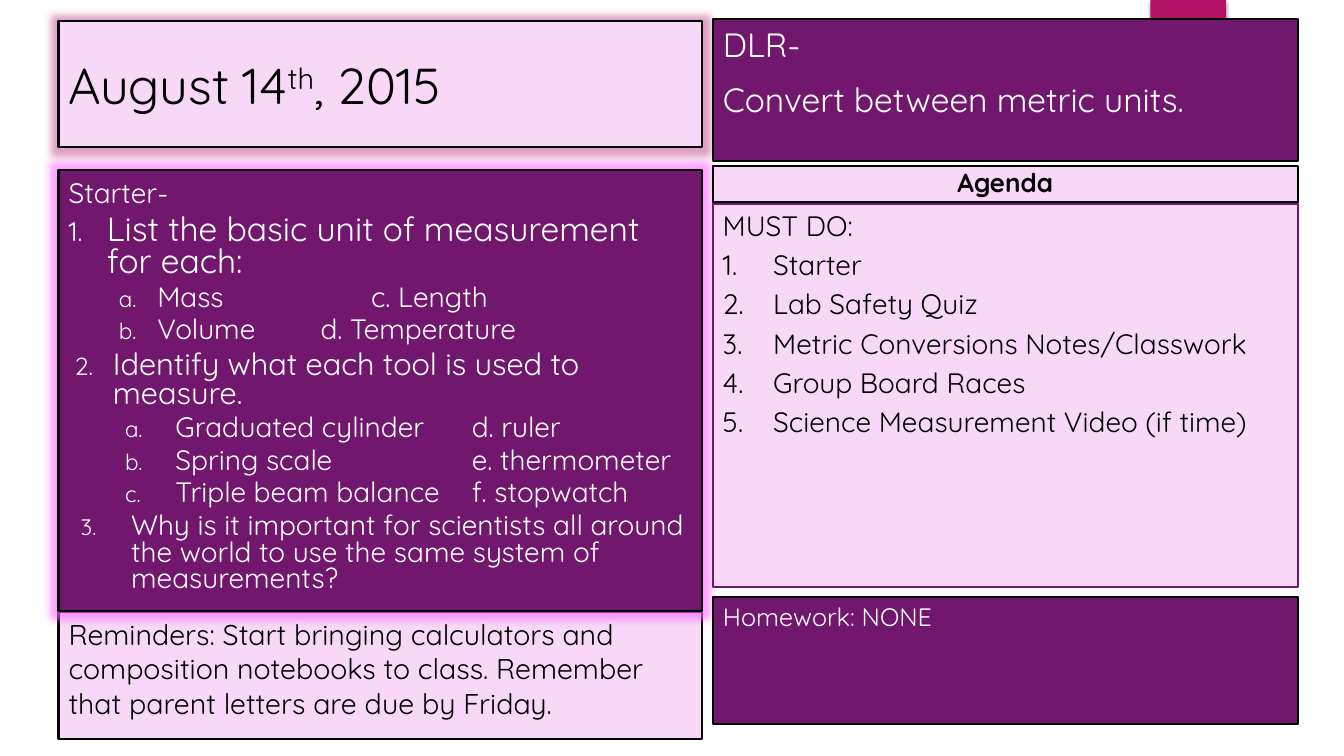
from lxml import etree
from pptx import Presentation
from pptx.dml.color import RGBColor
from pptx.enum.shapes import MSO_SHAPE
from pptx.enum.text import MSO_ANCHOR, MSO_AUTO_SIZE, PP_ALIGN
from pptx.oxml.ns import qn
from pptx.util import Inches, Pt

RECTANGLE = MSO_SHAPE.RECTANGLE
TOP, MIDDLE, BOTTOM = MSO_ANCHOR.TOP, MSO_ANCHOR.MIDDLE, MSO_ANCHOR.BOTTOM
LEFT, CENTER = PP_ALIGN.LEFT, PP_ALIGN.CENTER

FONT = "Quicksand"
PINK, PURPLE, BLACK, WHITE = "F7D8F6", "71186E", "000000", "FFFFFF"
ACCENT, MAGENTA = "B31166", "FF66FF"

# Columns: left edge and width
LEFT_COLUMN, RIGHT_COLUMN = (0.58, 6.38), (7.07, 5.8)

# Paragraph formats shared by the lists
LIST = {"spacing": 0.8, "bullet_color": WHITE, "number": "arabicPeriod"}
LETTERS = {**LIST, "level": 1, "number": "alphaLcPeriod"}
UNITS = {**LETTERS, "indent": (0.88, 0.38)}
TOOLS = {**LETTERS, "indent": (1.06, 0.5)}
STEP = {"number": "arabicPeriod", "indent": (0.5, 0.5)}

# Content: each paragraph is its text and its format
TITLE = [("August 14", False), ("th", True), (", 2015", False)]
REMINDERS = [("Reminders: Start bringing calculators and composition notebooks to class. "
              "Remember that parent letters are due by Friday.", {})]
DLR = [("DLR-", {}), ("Convert between metric units.", {"before": 10})]
STARTER = [
    ("Starter-", {}),
    ("List the basic unit of measurement for each:", {**LIST, "size": 24, "indent": (0.38, 0.38)}),
    ("Mass\t\t\tc. Length", UNITS),
    ("Volume\t\td. Temperature", UNITS),
    ("Identify what each tool is used to measure.", {**LIST, "size": 22, "indent": (0.44, 0.38)}),
    ("Graduated cylinder\td. ruler", TOOLS),
    ("Spring scale\t\t\te. thermometer", TOOLS),
    ("Triple beam balance\tf. stopwatch", TOOLS),
    ("Why is it important for scientists all around the world to use the same system "
     "of measurements?", {**LIST, "indent": (0.62, 0.5)}),
]
HOMEWORK = [("Homework: NONE", {})]
AGENDA_HEADING = [("Agenda", {"align": CENTER, "bold": True})]
AGENDA = [("MUST DO:", {})] + [(step, STEP) for step in (
    "Starter", "Lab Safety Quiz", "Metric Conversions Notes/Classwork",
    "Group Board Races", "Science Measurement Video (if time)")]

# Panels: placeholder index (None for a plain shape), column, top, height,
# fill, line, text colour, text size, anchor, paragraphs
PANELS = [
    (1, LEFT_COLUMN, 6.07, 1.26, PINK, BLACK, BLACK, 20.4, TOP, REMINDERS),
    (2, RIGHT_COLUMN, 0.19, 1.41, PURPLE, BLACK, WHITE, 24, TOP, DLR),
    (3, LEFT_COLUMN, 1.69, 4.37, PURPLE, BLACK, WHITE, 20, TOP, STARTER),
    (4, RIGHT_COLUMN, 5.92, 1.26, PURPLE, BLACK, WHITE, 18, TOP, HOMEWORK),
    (None, RIGHT_COLUMN, 1.65, 0.36, PINK, BLACK, BLACK, 18.6, BOTTOM, AGENDA_HEADING),
    (None, RIGHT_COLUMN, 2.02, 3.8, PINK, PURPLE, BLACK, 20, TOP, AGENDA),
]


def color(value):
    return RGBColor.from_string(value)


def set_values(target, values):
    for name, value in values.items():
        setattr(target, name, value)


def add_element(parent, tag, **attributes):
    element = etree.SubElement(parent, qn(tag))
    for name, value in attributes.items():
        element.set(name, str(value))
    return element


def add_effect(shape, tag, value, alpha, **attributes):
    effects = shape.element.spPr.find(qn("a:effectLst"))
    if effects is None:
        effects = add_element(shape.element.spPr, "a:effectLst")
    effect = add_element(effects, tag, **attributes)
    add_element(add_element(effect, "a:srgbClr", val=value), "a:alpha", val=alpha * 1000)


def style_panel(shape, column, top, height, fill, line, anchor):
    left, width = column
    set_values(shape, {"left": Inches(left), "top": Inches(top),
                       "width": Inches(width), "height": Inches(height)})
    shape.fill.solid()
    shape.fill.fore_color.rgb = color(fill)
    shape.line.color.rgb = color(line)
    shape.line.width = Pt(1.5)
    set_values(shape.text_frame, {"word_wrap": True, "auto_size": MSO_AUTO_SIZE.NONE,
                                  "vertical_anchor": anchor})


def add_run(paragraph, text, size, text_color, bold=False):
    run = paragraph.add_run()
    run.text = text
    set_values(run.font, {"name": FONT, "size": Pt(size), "bold": bold})
    run.font.color.rgb = color(text_color)
    return run


def format_paragraph(paragraph, first, size, style):
    properties = paragraph._p.get_or_add_pPr()
    margin, hanging = style.get("indent", (0, 0))
    properties.set("marL", str(Inches(margin)))
    properties.set("indent", str(-Inches(hanging)))
    if "bullet_color" in style:
        add_element(add_element(properties, "a:buClr"), "a:srgbClr", val=style["bullet_color"])
        add_element(properties, "a:buSzPct", val=80000)
    if "number" in style:
        add_element(properties, "a:buFont", typeface=FONT)
        add_element(properties, "a:buAutoNum", type=style["number"])
    else:
        add_element(properties, "a:buNone")
    before = 0 if first else style.get("before", 0.2 * size)
    set_values(paragraph, {"level": style.get("level", 0), "alignment": style.get("align", LEFT),
                           "line_spacing": style.get("spacing", 1.0),
                           "space_before": Pt(before), "space_after": Pt(0)})


def write_paragraphs(text_frame, paragraphs, panel_size, text_color):
    for number, (text, style) in enumerate(paragraphs):
        paragraph = text_frame.add_paragraph() if number else text_frame.paragraphs[0]
        size = style.get("size", panel_size)
        format_paragraph(paragraph, number == 0, size, style)
        add_run(paragraph, text, size, text_color, style.get("bold", False))


def main():
    presentation = Presentation()
    set_values(presentation, {"slide_width": Inches(13.33), "slide_height": Inches(7.5)})
    slide = presentation.slides.add_slide(presentation.slide_layouts.get_by_name("Comparison"))
    placeholders = {shape.placeholder_format.idx: shape for shape in slide.placeholders}

    # Date title
    title = slide.shapes.title
    style_panel(title, LEFT_COLUMN, 0.21, 1.25, PINK, BLACK, MIDDLE)
    paragraph = title.text_frame.paragraphs[0]
    paragraph.alignment = LEFT
    for text, raised in TITLE:
        run = add_run(paragraph, text, 36, BLACK)
        if raised:
            run.font._element.set("baseline", "30000")
    add_effect(title, "a:glow", ACCENT, 40, rad=Pt(10))

    # Accent tab behind the panels
    accent_tab = slide.shapes.add_shape(RECTANGLE, Inches(11.41), 0, Inches(0.75), Inches(1.25))
    accent_tab.shadow.inherit = False
    accent_tab.fill.solid()
    accent_tab.fill.fore_color.rgb = color(ACCENT)
    accent_tab.line.fill.background()
    add_effect(accent_tab, "a:outerShdw", BLACK, 45, blurRad=Pt(3), dist=Pt(2), dir=5400000)
    title.element.addprevious(accent_tab.element)

    # Text panels
    for index, column, top, height, fill, line, text_color, size, anchor, paragraphs in PANELS:
        if index is None:
            panel = slide.shapes.add_shape(RECTANGLE, 0, 0, 0, 0)
            panel.shadow.inherit = False
        else:
            panel = placeholders[index]
        style_panel(panel, column, top, height, fill, line, anchor)
        write_paragraphs(panel.text_frame, paragraphs, size, text_color)
    add_effect(placeholders[3], "a:glow", MAGENTA, 60, rad=Pt(10))

    presentation.save("out.pptx")


if __name__ == "__main__":
    main()
